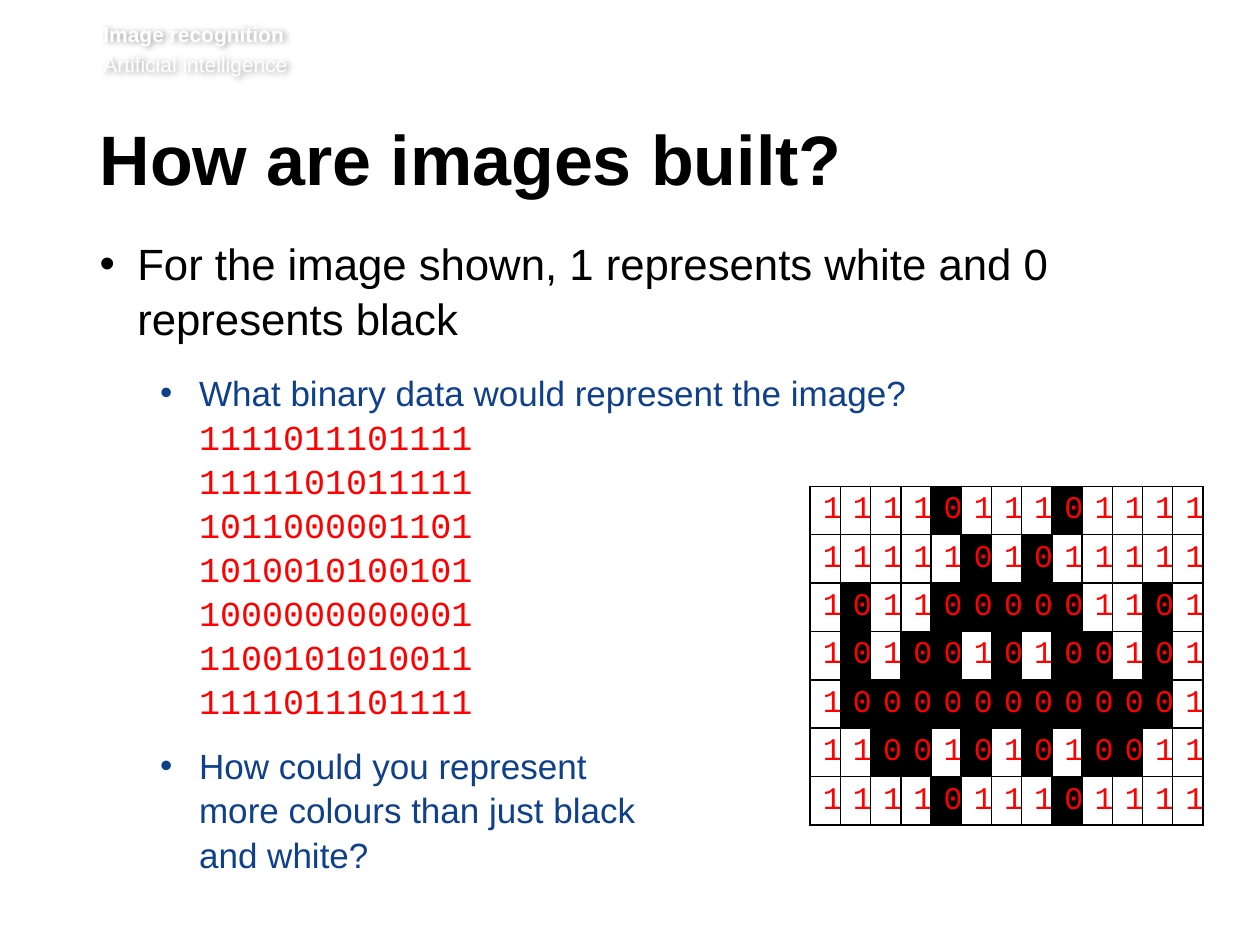
from lxml import etree
from pptx import Presentation
from pptx import util as u
from pptx.dml.color import RGBColor
from pptx.enum import text
from pptx.oxml import parse_xml
from pptx.oxml.ns import nsdecls, qn

COLORS = {"black": "000000", "white": "FFFFFF", "blue": "0F408C", "red": "FF0000"}
SANS, MONO = "Arial", "Courier New"
BITMAP = [
    "1111011101111",
    "1111101011111",
    "1011000001101",
    "1010010100101",
    "1000000000001",
    "1100101010011",
    "1111011101111",
]


class Deck:
    def __init__(self, prs):
        self.prs = prs
        self.s = prs.slides.add_slide(prs.slide_layouts[5])

    def rgb(self, color):
        return RGBColor.from_string(COLORS[color])

    def style(self, runs, size, color, font=SANS, bold=False):
        for r in runs:
            r.font.size = u.Pt(size)
            r.font.name = font
            r.font.bold = bold
            r.font.color.rgb = self.rgb(color)

    def frame(self, sp, box, top=0, right=0.1):
        sp.left, sp.top, sp.width, sp.height = [u.Inches(v) for v in box]
        tf = sp.text_frame
        tf.word_wrap = True
        tf.auto_size = text.MSO_AUTO_SIZE.NONE
        tf.vertical_anchor = text.MSO_ANCHOR.TOP
        tf.margin_left, tf.margin_top = 0, u.Inches(top)
        tf.margin_right, tf.margin_bottom = u.Inches(right), u.Inches(0.05)
        return tf

    def textbox(self, box, right=0.1):
        return self.frame(self.s.shapes.add_textbox(0, 0, 0, 0), box, right=right)

    def title(self, box, words):
        tf = self.frame(self.s.shapes.title, box, top=0.05)
        tf.text = words
        p = tf.paragraphs[0]
        p.alignment = text.PP_ALIGN.LEFT
        p.line_spacing = u.Pt(39)
        p.space_after = u.Pt(15)
        self.style(p.runs, 40, "black", bold=True)

    def header(self, box, lines):
        tf = self.textbox(box, right=0)
        tf.text = "\n".join(lines)
        for i, p in enumerate(tf.paragraphs):
            p.space_before = u.Pt(2.9 if i else 0)
            self.style(p.runs, 12, "white", bold=i == 0)
        sp = self.s.shapes[-1]
        sp._element.spPr.append(parse_xml(
            f'<a:effectLst {nsdecls("a")}><a:outerShdw blurRad="50800" dist="12700" dir="0">'
            '<a:srgbClr val="000000"><a:alpha val="40000"/></a:srgbClr>'
            '</a:outerShdw></a:effectLst>'))

    def bullet(self, p, words, size, color, left, hang, after, level=0):
        p.text = words
        p.level = level
        pPr = p._p.get_or_add_pPr()
        pPr.set("marL", str(u.Inches(left)))
        pPr.set("indent", str(-u.Inches(hang)))
        bu_color = etree.SubElement(pPr, qn("a:buClr"))
        etree.SubElement(bu_color, qn("a:srgbClr")).set("val", COLORS[color])
        etree.SubElement(pPr, qn("a:buFont")).set("typeface", SANS)
        etree.SubElement(pPr, qn("a:buChar")).set("char", "•")
        p.line_spacing = 1.05
        p.space_after = u.Pt(after)
        self.style(p.runs, size, color)

    def bit_grid(self, left, top, col_width, row_height, rows):
        n_rows, n_cols = len(rows), len(rows[0])
        gf = self.s.shapes.add_table(
            n_rows, n_cols, u.Inches(left), u.Inches(top),
            u.Inches(col_width * n_cols), u.Inches(row_height * n_rows))
        table = gf.table
        table.first_row = table.horz_banding = False
        for col in table.columns:
            col.width = u.Inches(col_width)
        for row, bits in zip(table.rows, rows):
            row.height = u.Inches(row_height)
            for cell, bit in zip(row.cells, bits):
                self.bit_cell(cell, bit)

    def bit_cell(self, cell, bit):
        cell.text = bit
        p = cell.text_frame.paragraphs[0]
        p.alignment = text.PP_ALIGN.CENTER
        self.style(p.runs, 18, "red", MONO)
        tcPr = cell._tc.get_or_add_tcPr()
        for side in ("lnL", "lnR", "lnT", "lnB"):
            tcPr.append(parse_xml(
                f'<a:{side} {nsdecls("a")} w="12700"><a:solidFill>'
                f'<a:srgbClr val="{COLORS["black"]}"/></a:solidFill></a:{side}>'))
        cell.fill.solid()
        cell.fill.fore_color.rgb = self.rgb("white" if bit == "1" else "black")


def main():
    prs = Presentation()
    prs.slide_width, prs.slide_height = u.Inches(10), u.Inches(7.5)
    deck = Deck(prs)
    deck.header((0.82, 0.17, 8.82, 0.49), ["Image recognition", "Artificial intelligence"])
    deck.title((0.79, 0.99, 8.55, 0.73), "How are images built?")

    tf = deck.textbox((0.79, 1.86, 8.53, 3.78))
    deck.bullet(tf.paragraphs[0],
                "For the image shown, 1 represents white and 0 represents black",
                25, "black", 0.3, 0.3, 14)
    sub = dict(size=20, color="blue", left=0.79, hang=0.31, after=12, level=1)
    p = tf.add_paragraph()
    deck.bullet(p, "\n".join(["What binary data would represent the image?"] + BITMAP), **sub)
    deck.style(p.runs[1:], 20, "red", MONO)
    deck.bullet(tf.add_paragraph(),
                "How could you represent \nmore colours than just black \nand white?", **sub)

    deck.bit_grid(6.43, 3.86, 0.24, 0.38, BITMAP)
    prs.save("out.pptx")


if __name__ == "__main__":
    main()
